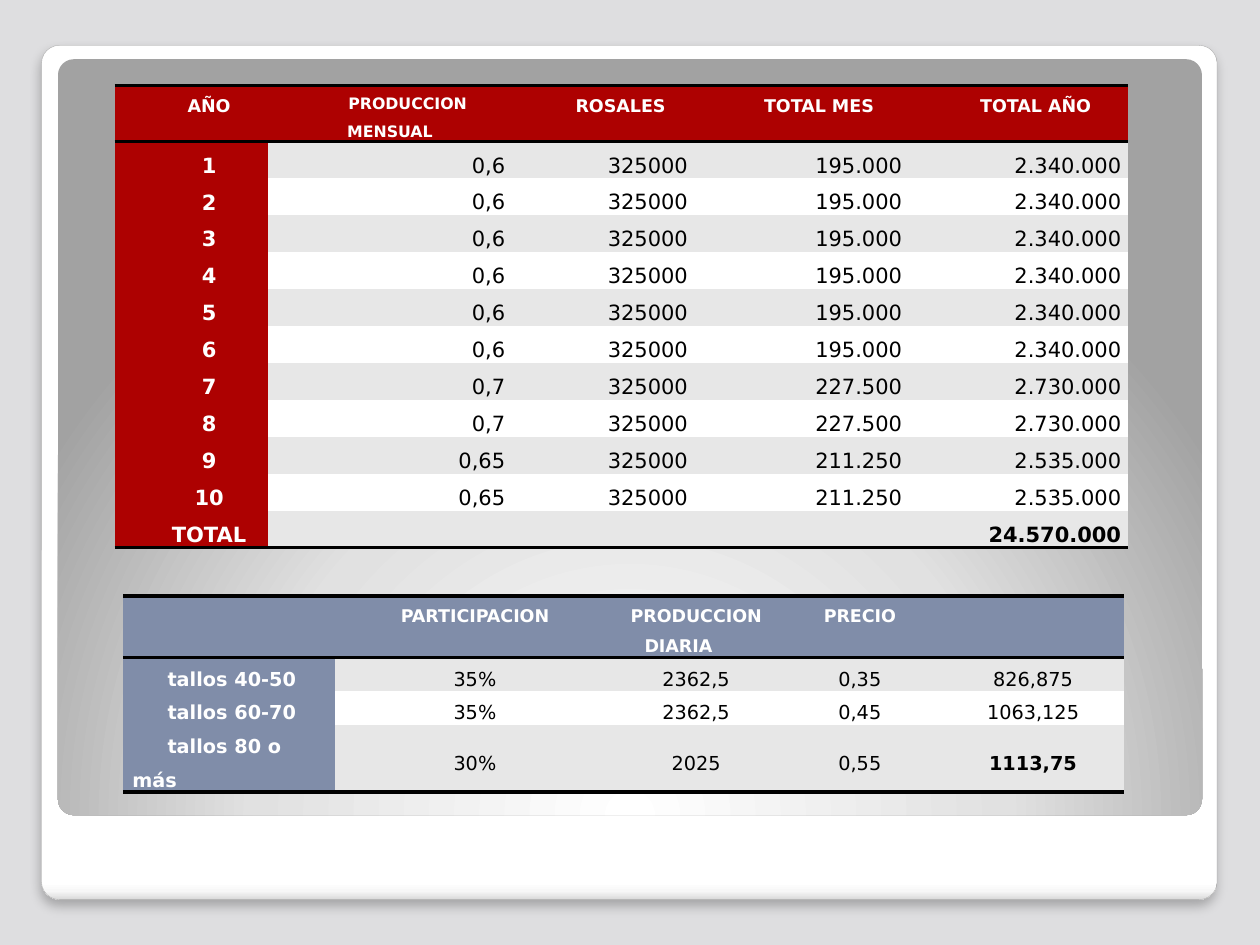
import dataclasses

import pptx
import pptx.dml.color
import pptx.enum.shapes
import pptx.enum.text
import pptx.oxml
import pptx.oxml.ns
import pptx.util

PP = pptx.enum.text.PP_ALIGN
MSO = pptx.enum.text.MSO_ANCHOR
NS = pptx.oxml.ns.nsdecls("a")
NO_STYLE = "{2D5ABB26-0587-4C30-8999-92F81FD0307C}"


@dataclasses.dataclass(frozen=True)
class Theme:
    font: str = "DejaVu Sans"
    backdrop: str = "DEDEE0"
    edge: str = "A4A4A4"
    red: str = "AD0101"
    blue: str = "808DA9"
    white: str = "FFFFFF"
    black: str = "000000"
    band: str = "E7E7E7"
    small: int = 9
    head: int = 10
    body: int = 11
    large: int = 12
    rule: int = 2
    spacing: float = 1.5
    indent: float = 0.28


@dataclasses.dataclass(frozen=True)
class TableStyle:
    accent: str
    size: int
    align: PP
    label_align: PP
    label_anchor: MSO
    body_anchor: MSO
    margin: float


class Deck:
    COLS, ROWS = 100, 75

    def __init__(self, theme):
        self.theme = theme
        self.prs = pptx.Presentation()
        self.prs.slide_width = pptx.util.Inches(10)
        self.prs.slide_height = pptx.util.Inches(7.5)
        self.s = self.prs.slides.add_slide(self.prs.slide_layouts[6])
        fill = self.s.background.fill
        fill.solid()
        fill.fore_color.rgb = self.rgb(theme.backdrop)

    def rgb(self, color):
        return pptx.dml.color.RGBColor.from_string(color)

    def x(self, cols):
        return round(self.prs.slide_width * cols / self.COLS)

    def y(self, rows):
        return round(self.prs.slide_height * rows / self.ROWS)

    def panel(self, x, y, w, h, stops, direction, line=None, shadow=""):
        sp = self.s.shapes.add_shape(
            pptx.enum.shapes.MSO_SHAPE.ROUNDED_RECTANGLE,
            self.x(x), self.y(y), self.x(w), self.y(h))
        sp.adjustments[0] = 0.021
        sp.shadow.inherit = False
        sp.fill.background()
        gs = "".join(f'<a:gs pos="{pos * 1000}"><a:srgbClr val="{color}"/></a:gs>'
                     for pos, color in stops)
        grad = pptx.oxml.parse_xml(
            f'<a:gradFill {NS} rotWithShape="1"><a:gsLst>{gs}</a:gsLst>{direction}</a:gradFill>')
        sp_pr = sp.element.spPr
        sp_pr.replace(sp_pr.find(pptx.oxml.ns.qn("a:noFill")), grad)
        if line:
            sp.line.color.rgb = self.rgb(line)
            sp.line.width = pptx.util.Pt(0.16)
        else:
            sp.line.fill.background()
        if shadow:
            effects = sp_pr.find(pptx.oxml.ns.qn("a:effectLst"))
            effects.append(pptx.oxml.parse_xml(shadow))

    def border(self, cell, side):
        t = self.theme
        cell._tc.get_or_add_tcPr().append(pptx.oxml.parse_xml(
            f'<a:ln{side} {NS} w="{pptx.util.Pt(t.rule)}"><a:solidFill>'
            f'<a:srgbClr val="{t.black}"/></a:solidFill></a:ln{side}>'))

    def cell(self, cell, text, fill, size, color, bold, align, anchor, margin):
        t = self.theme
        cell.fill.solid()
        cell.fill.fore_color.rgb = self.rgb(fill)
        cell.margin_left = cell.margin_right = pptx.util.Inches(margin)
        cell.margin_top = cell.margin_bottom = 0
        cell.vertical_anchor = anchor
        p = cell.text_frame.paragraphs[0]
        if text:
            p.text = text
            p.line_spacing = t.spacing
            p._p.get_or_add_pPr().set("indent", str(pptx.util.Inches(t.indent)))
        p.alignment = align
        p.font.name, p.font.size, p.font.bold = t.font, pptx.util.Pt(size), bold
        p.font.color.rgb = self.rgb(color)

    def table(self, x, y, widths, heights, rows, style, head_sizes):
        t = self.theme
        frame = self.s.shapes.add_table(
            len(rows), len(widths), self.x(x), self.y(y),
            self.x(sum(widths)), self.y(sum(heights)))
        tbl = frame.table
        tbl.first_row = tbl.horz_banding = False
        tbl._tbl.tblPr.find(pptx.oxml.ns.qn("a:tableStyleId")).text = NO_STYLE
        for column, width in zip(tbl.columns, widths):
            column.width = self.x(width)
        for row, height in zip(tbl.rows, heights):
            row.height = self.y(height)
        last = len(rows) - 1
        for i, row in enumerate(rows):
            for j, text in enumerate(row):
                cell = tbl.cell(i, j)
                if i == 0:
                    self.border(cell, "T")
                if i in (0, last):
                    self.border(cell, "B")
                if i == 0:
                    look = (style.accent, head_sizes[j], t.white, True, PP.CENTER, MSO.TOP)
                elif j == 0:
                    look = (style.accent, style.size, t.white, True,
                            style.label_align, style.label_anchor)
                else:
                    grand_total = i == last and j == len(row) - 1
                    look = (t.band if i % 2 else t.white, style.size, t.black,
                            grand_total, style.align, style.body_anchor)
                self.cell(cell, text, *look, style.margin)


def main():
    t = Theme()
    deck = Deck(t)
    deck.panel(
        3.3, 3.6, 93.3, 67.8,
        [(0, t.white), (98, t.white), (99, "F7F7F7"), (100, "DADADA")],
        '<a:lin ang="5400000" scaled="0"/>', t.edge,
        f'<a:outerShdw {NS} blurRad="{pptx.util.Pt(6)}" dist="{pptx.util.Pt(4)}" '
        f'dir="5400000" algn="t" rotWithShape="0"><a:srgbClr val="{t.black}">'
        '<a:alpha val="25000"/></a:srgbClr></a:outerShdw>')
    deck.panel(
        4.6, 4.7, 90.8, 60, [(0, t.white), (55, "E1E1E1"), (100, "A2A2A2")],
        '<a:path path="circle"><a:fillToRect l="50000" t="175000" r="50000" b="-75000"/></a:path>')

    yields = ([("0,6", "195.000", "2.340.000")] * 6
              + [("0,7", "227.500", "2.730.000")] * 2
              + [("0,65", "211.250", "2.535.000")] * 2)
    years = [(str(n), rate, "325000", month, year)
             for n, (rate, month, year) in enumerate(yields, 1)]
    production = [("AÑO", "PRODUCCION MENSUAL", "ROSALES", "TOTAL MES", "TOTAL AÑO"),
                  *years, ("TOTAL", "", "", "", "24.570.000")]
    deck.table(
        9.1, 6.8, [12.2, 19.3, 14.5, 17, 17.4], [2.9] * len(production), production,
        TableStyle(t.red, t.large, PP.RIGHT, PP.CENTER, MSO.MIDDLE, MSO.TOP, 0.05),
        [t.head, t.small, t.head, t.head, t.head])

    stems = [("", "PARTICIPACION", "PRODUCCION DIARIA", "PRECIO", ""),
             ("tallos 40-50", "35%", "2362,5", "0,35", "826,875"),
             ("tallos 60-70", "35%", "2362,5", "0,45", "1063,125"),
             ("tallos 80 o más", "30%", "2025", "0,55", "1113,75")]
    deck.table(
        9.8, 47.3, [16.8, 19.4, 15.7, 10.3, 17.2], [2.1] * len(stems), stems,
        TableStyle(t.blue, t.body, PP.CENTER, PP.LEFT, MSO.TOP, MSO.MIDDLE, 0.07),
        [t.head] * 5)
    deck.prs.save("out.pptx")


if __name__ == "__main__":
    main()
